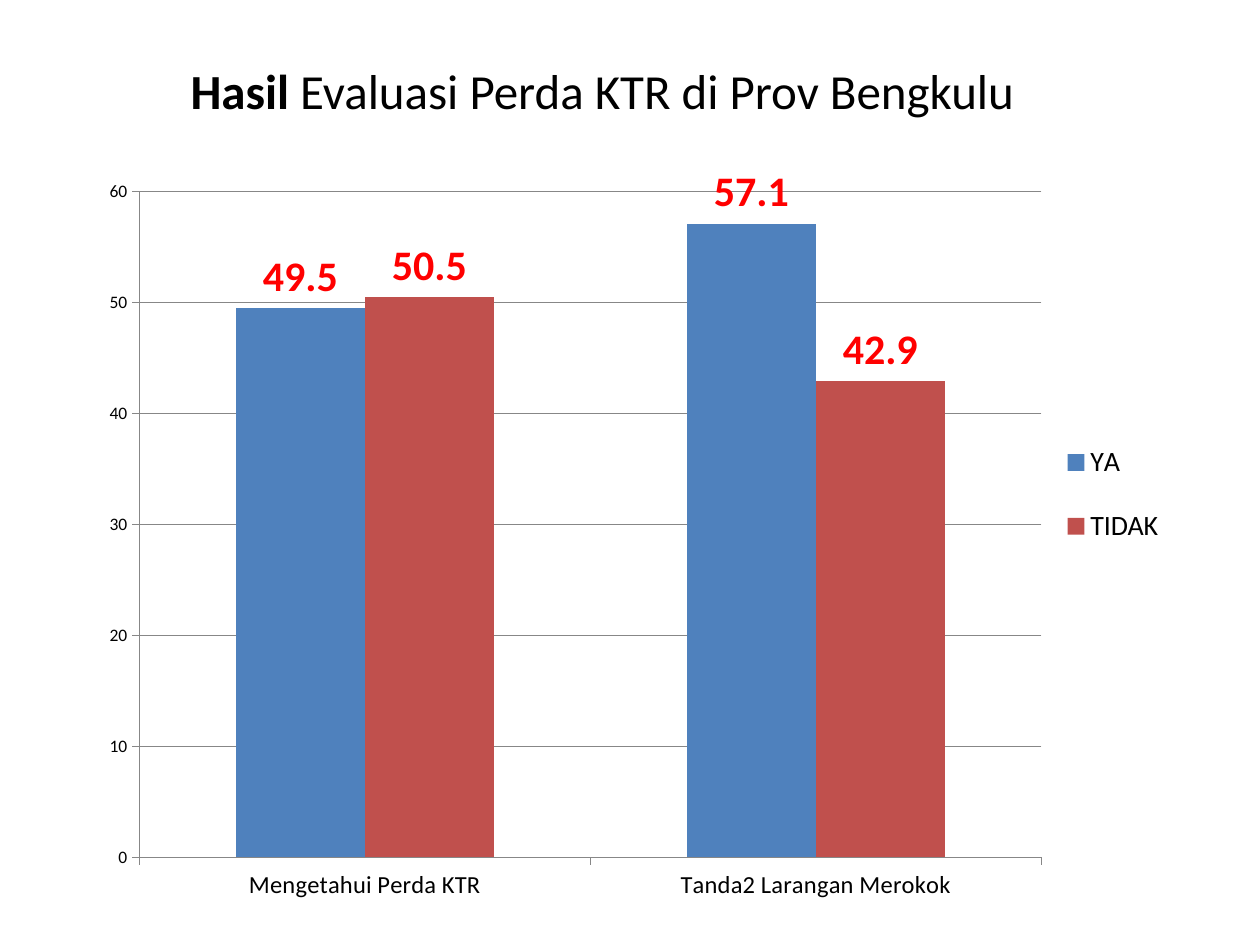
from dataclasses import dataclass

from lxml.etree import SubElement
from pptx import Presentation
from pptx.chart.data import CategoryChartData as Data
from pptx.dml.color import RGBColor
from pptx.enum.chart import XL_CHART_TYPE as Kind
from pptx.enum.chart import XL_LABEL_POSITION as Spot
from pptx.enum.chart import XL_LEGEND_POSITION as Side
from pptx.enum.chart import XL_TICK_MARK as Tick
from pptx.enum.text import MSO_ANCHOR as Anchor
from pptx.enum.text import PP_ALIGN as Align
from pptx.oxml import parse_xml
from pptx.oxml.ns import nsdecls, qn
from pptx.util import Inches, Pt


@dataclass
class Group:
    name: str
    vals: tuple[float, ...]
    tint: str


GROUPS = [
    Group("YA", (49.5, 57.1), "4F81BD"),
    Group("TIDAK", (50.5, 42.9), "C0504D"),
]
CATS = ["Mengetahui Perda KTR", "Tanda2 Larangan Merokok"]
TITLE = [("Hasil ", True), ("Evaluasi Perda KTR di Prov Bengkulu", False)]
GREY = "878787"


def paint(color, tint: str) -> None:
    color.rgb = RGBColor.from_string(tint)


def style(font, size: float, tint: str = "000000", bold: bool = False) -> None:
    look = {"name": "Calibri", "size": Pt(size), "bold": bold}
    for key, value in look.items():
        setattr(font, key, value)
    paint(font.color, tint)


def rule(line) -> None:
    line.width = Pt(0.75)
    paint(line.color, GREY)


def place(part, index: int, box: dict[str, float], inner: bool = False) -> None:
    for old in part.findall(qn("c:layout")):
        part.remove(old)
    target = '<c:layoutTarget val="inner"/>' if inner else ""
    modes = "".join(f'<c:{key}Mode val="edge"/>' for key in "xy")
    sizes = "".join(f'<c:{key} val="{value}"/>' for key, value in box.items())
    part.insert(index, parse_xml(
        f'<c:layout {nsdecls("c")}><c:manualLayout>'
        f'{target}{modes}{sizes}</c:manualLayout></c:layout>'
    ))


def draw_title(slide) -> None:
    box = slide.shapes.add_textbox(
        Inches(0.56), Inches(0.58), Inches(8.44), Inches(1)
    )
    frame = box.text_frame
    frame.word_wrap = True
    frame.vertical_anchor = Anchor.MIDDLE
    para = frame.paragraphs[0]
    para.alignment = Align.CENTER
    for text, bold in TITLE:
        run = para.add_run()
        run.text = text
        style(run.font, 28, bold=bold)
    para.add_line_break()
    SubElement(para._p, qn("a:endParaRPr"), sz="4400")


def draw_bars(plot) -> None:
    plot.gap_width = 150
    plot.overlap = 0
    plot.vary_by_categories = False
    for group, bars in zip(GROUPS, plot.series):
        bars.format.fill.solid()
        paint(bars.format.fill.fore_color, group.tint)
        bars.invert_if_negative = False
        labels = bars.data_labels
        labels.show_value = True
        labels.position = Spot.OUTSIDE_END
        style(labels.font, 24, "FF0000", True)


def draw_chart(slide) -> None:
    data = Data()
    data.categories = CATS
    for group in GROUPS:
        data.add_series(group.name, group.vals)
    chart = slide.shapes.add_chart(
        Kind.COLUMN_CLUSTERED,
        Inches(0.67), Inches(1.33), Inches(8.73), Inches(5.95), data,
    ).chart
    chart.has_title = False
    style(chart.font, 10)
    draw_bars(chart.plots[0])

    for axis, size in ((chart.category_axis, 14), (chart.value_axis, 10)):
        axis.major_tick_mark = Tick.OUTSIDE
        axis.minor_tick_mark = Tick.NONE
        rule(axis.format.line)
        style(axis.tick_labels.font, size)
    scale = chart.value_axis
    scale.minimum_scale, scale.maximum_scale, scale.major_unit = 0, 60, 10
    scale.has_major_gridlines = True
    rule(scale.major_gridlines.format.line)

    chart.has_legend = True
    legend = chart.legend
    legend.position = Side.RIGHT
    legend.include_in_layout = False
    style(legend.font, 16)

    root = chart._chartSpace
    place(root.find(".//" + qn("c:plotArea")), 0,
          {"x": 0.05, "y": 0.03, "w": 0.82, "h": 0.89}, True)
    place(root.find(".//" + qn("c:legend")), 1,
          {"x": 0.88, "y": 0.33, "w": 0.11, "h": 0.21})


def main() -> None:
    deck = Presentation()
    deck.slide_width, deck.slide_height = Inches(10), Inches(7.5)
    slide = deck.slides.add_slide(deck.slide_layouts[6])
    draw_title(slide)
    draw_chart(slide)
    deck.save("out.pptx")


if __name__ == "__main__":
    main()
